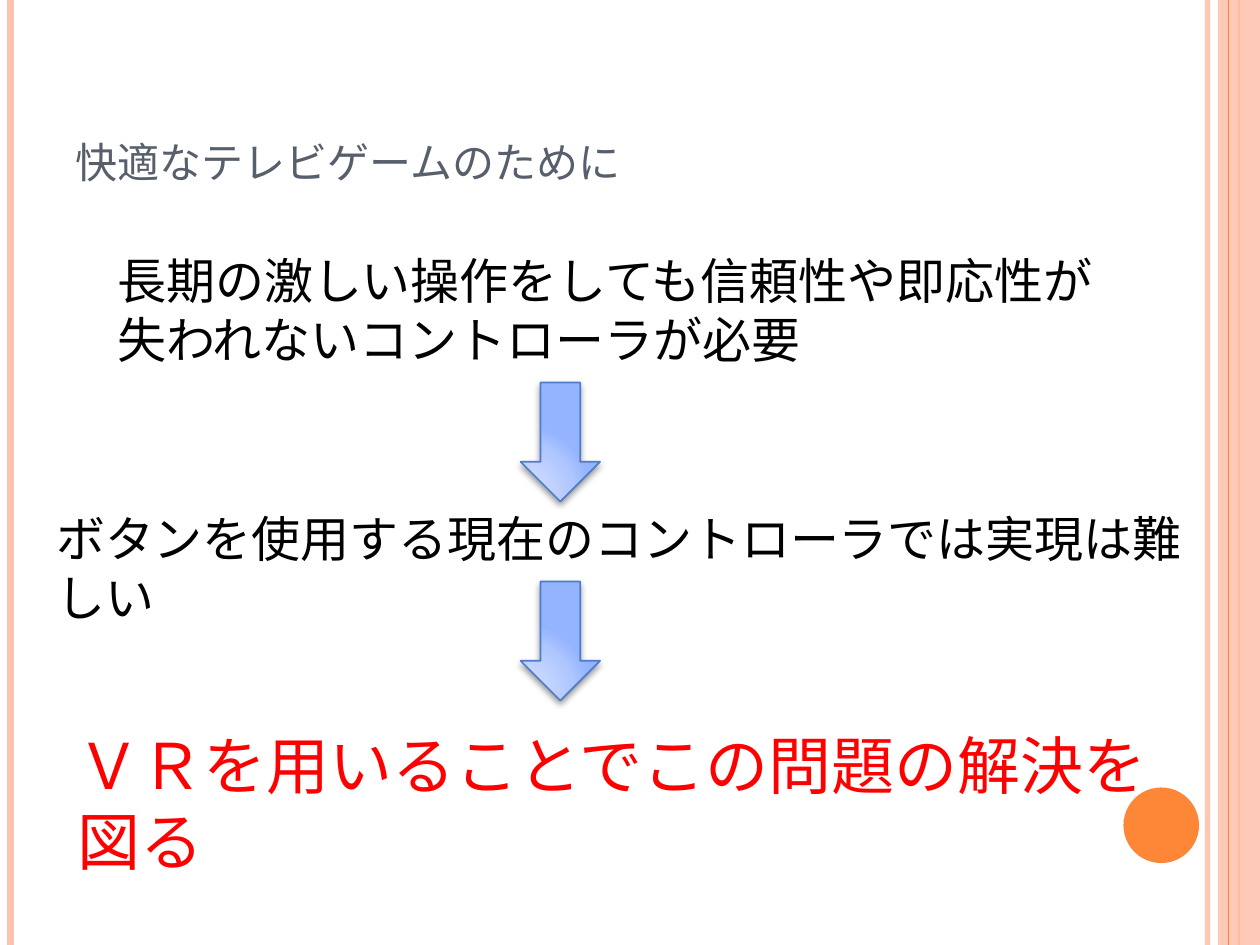
"""Build the slide on controllers for comfortable video games."""
from lxml.etree import SubElement
from pptx import Presentation
from pptx.dml.color import RGBColor
from pptx.enum.shapes import MSO_CONNECTOR as CONNECTOR, MSO_SHAPE as SHAPE
from pptx.enum.text import MSO_ANCHOR as ANCHOR, MSO_AUTO_SIZE as AUTO_SIZE
from pptx.oxml import parse_xml
from pptx.oxml.ns import nsdecls, qn
from pptx.util import Pt

PEACH = RGBColor(0xFE, 0xC3, 0xAE)
ORANGE = RGBColor(0xFE, 0x86, 0x37)
SLATE = RGBColor(0x57, 0x5F, 0x6D)
BLACK = RGBColor(0, 0, 0)
RED = RGBColor(0xFF, 0, 0)
ARROW_EDGE = RGBColor(0x4F, 0x7C, 0xCF)
ARROW_STOPS = [
    (0, RGBColor(0xCF, 0xDC, 0xFF)),
    (30, RGBColor(0xCB, 0xD9, 0xFF)),
    (75, RGBColor(0xAF, 0xC6, 0xFF)),
    (100, RGBColor(0x95, 0xB4, 0xFF)),
]


def set_alpha(element, percent):
    """Make the first colour inside an element partly transparent."""
    color = next(element.iter(qn("a:srgbClr")))
    SubElement(color, qn("a:alpha"), val=str(percent * 1000))


def write(para, text, formats):
    """Add a span of text to a paragraph with the given font formats."""
    span = para.add_run()
    span.text = text
    color = formats["color"]
    span.font.color.rgb = color
    for name, value in formats.items():
        if name != "color":
            setattr(span.font, name, value)
    return span


deck = Presentation()
deck.slide_width, deck.slide_height = Pt(720), Pt(540)
page = deck.slides.add_slide(deck.slide_layouts[5])
shapes = page.shapes

rules = [(690, 3, PEACH, 93), (6, 4.5, PEACH, 100), (708, 1.5, ORANGE, 100), (702, 0.75, ORANGE, 100)]
for x, width, color, alpha in rules:
    if x == 702:
        band = shapes.add_shape(SHAPE.RECTANGLE, Pt(696), Pt(0), Pt(24), Pt(540))
        band.shadow.inherit = False
        band.fill.solid()
        band.fill.fore_color.rgb = PEACH
        band.line.fill.background()
        set_alpha(band.element.spPr, 87)
    rule = shapes.add_connector(CONNECTOR.STRAIGHT, Pt(x), Pt(0), Pt(x), Pt(540))
    rule.line.width = Pt(width)
    rule.line.color.rgb = color
    SubElement(rule.element.spPr, qn("a:effectLst"))
    if alpha < 100:
        set_alpha(rule.element.spPr, alpha)

disc = shapes.add_shape(SHAPE.OVAL, Pt(642), Pt(450), Pt(43.2), Pt(43.2))
disc.shadow.inherit = False
disc.fill.solid()
disc.fill.fore_color.rgb = ORANGE
disc.line.fill.background()

title = shapes.title
for name, value in {"left": 36, "top": 21.6, "width": 588, "height": 90}.items():
    setattr(title, name, Pt(value))
title.text_frame.vertical_anchor = ANCHOR.BOTTOM
title.text_frame.auto_size = AUTO_SIZE.NONE
heading = title.text_frame.paragraphs[0]
heading.alignment = 1
span = write(heading, "快適なテレビゲームのために", {"size": Pt(30), "name": "Cambria", "color": SLATE})
span.font._element.set("cap", "small")

statements = [
    ((60, 139.6, 590, 75), 28, BLACK, ["長期の激しい操作をしても信頼性や即応性が", "失われないコントローラが必要"]),
    ((25, 287.2, 672, 41), 28, BLACK, ["ボタンを使用する現在のコントローラでは実現は難しい"]),
    ((37, 411.8, 629, 51), 36, RED, ["ＶＲを用いることでこの問題の解決を図る"]),
]
for bounds, size, color, lines in statements:
    box = shapes.add_textbox(*map(Pt, bounds))
    frame = box.text_frame
    frame.word_wrap = True
    frame.auto_size = AUTO_SIZE.SHAPE_TO_FIT_TEXT
    for number, line in enumerate(lines):
        para = frame.add_paragraph() if number else frame.paragraphs[0]
        write(para, line, {"size": Pt(size), "name": "Cambria", "color": color})

stops = "".join(
    f'<a:gs pos="{position * 1000}"><a:srgbClr val="{color}"/></a:gs>' for position, color in ARROW_STOPS
)
for top in (218.6, 332.3):
    arrow = shapes.add_shape(SHAPE.DOWN_ARROW, Pt(297.5), Pt(top), Pt(45.4), Pt(68))
    arrow.line.color.rgb = ARROW_EDGE
    arrow.line.width = Pt(1)
    arrow.shadow.inherit = False
    properties = arrow.element.spPr
    properties.find(qn("a:ln")).addprevious(parse_xml(
        f'<a:gradFill {nsdecls("a")} rotWithShape="1"><a:gsLst>{stops}</a:gsLst>'
        '<a:path path="circle"><a:fillToRect l="5000" t="100000" r="120000" b="10000"/></a:path></a:gradFill>'
    ))
    properties.find(qn("a:effectLst")).append(parse_xml(
        f'<a:outerShdw {nsdecls("a")} blurRad="{Pt(4)}" dist="{Pt(2)}" dir="5400000" rotWithShape="0">'
        '<a:srgbClr val="000000"><a:alpha val="40000"/></a:srgbClr></a:outerShdw>'
    ))

deck.save("out.pptx")
